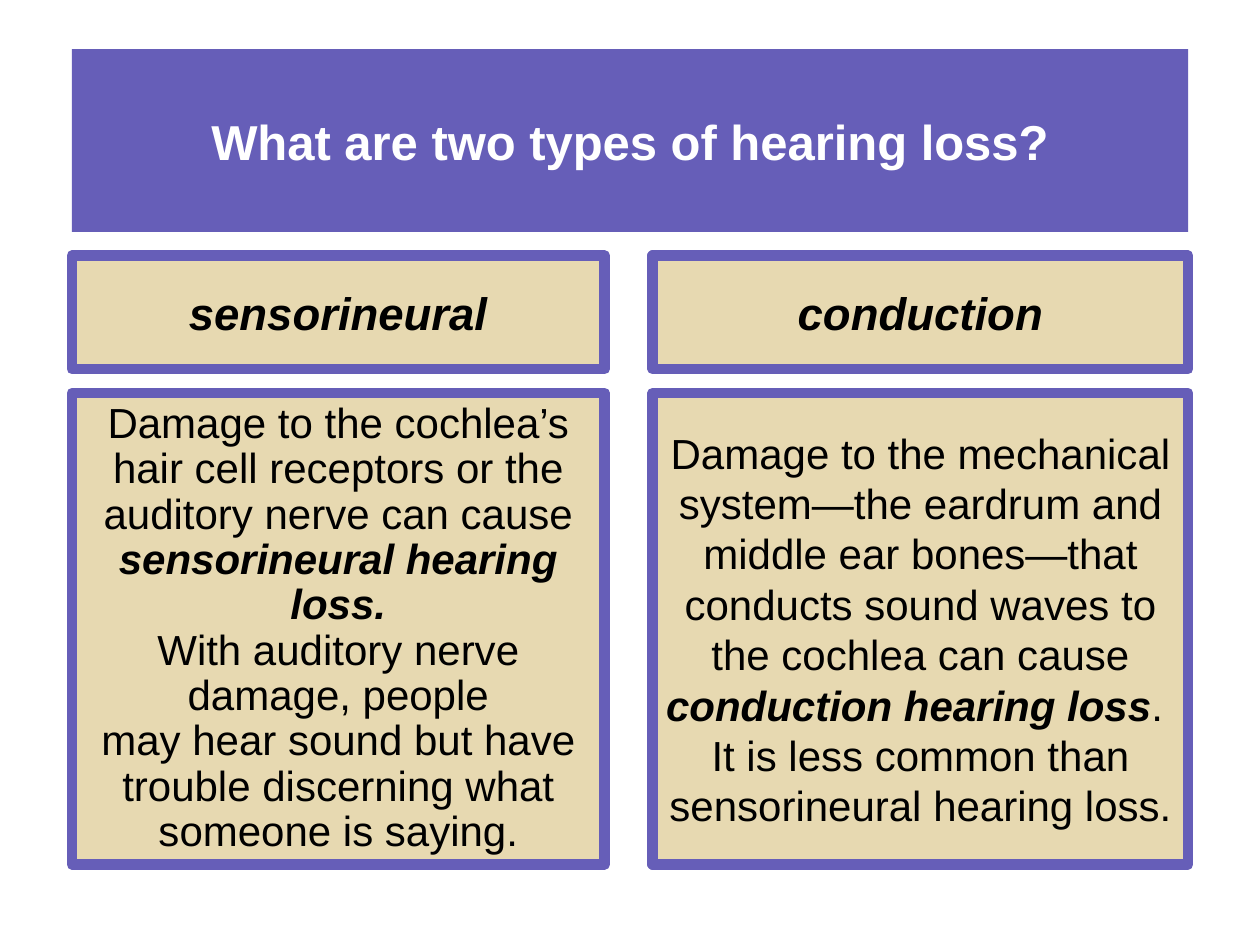
from dataclasses import dataclass

from pptx import Presentation
from pptx.dml.color import RGBColor
from pptx.enum.shapes import MSO_SHAPE
from pptx.enum.text import MSO_ANCHOR, PP_ALIGN
from pptx.util import Inches, Pt


@dataclass(frozen=True)
class Theme:
    purple: RGBColor = RGBColor(0x66, 0x5E, 0xB8)
    sand: RGBColor = RGBColor(0xE7, 0xD9, 0xB1)
    white: RGBColor = RGBColor(0xFF, 0xFF, 0xFF)
    black: RGBColor = RGBColor(0, 0, 0)
    font: str = "Arial"
    title_size: int = 28
    heading_size: int = 26
    body_size: int = 24
    border: int = 6


theme = Theme()


def add_run(paragraph, text, *, size, color=theme.black, bold=False, italic=False):
    run = paragraph.add_run()
    run.text = text
    run.font.name = theme.font
    run.font.size = Pt(size)
    run.font.color.rgb = color
    run.font.bold = bold
    run.font.italic = italic


def add_panel(slide, left, top, width, height, fill, bordered=True):
    shape = slide.shapes.add_shape(
        MSO_SHAPE.RECTANGLE, Inches(left), Inches(top), Inches(width), Inches(height)
    )
    shape.shadow.inherit = False
    shape.fill.solid()
    shape.fill.fore_color.rgb = fill
    if bordered:
        shape.line.color.rgb = theme.purple
        shape.line.width = Pt(theme.border)
    else:
        shape.line.fill.background()
    shape.text_frame.word_wrap = True
    shape.text_frame.vertical_anchor = MSO_ANCHOR.MIDDLE
    shape.text_frame.paragraphs[0].alignment = PP_ALIGN.CENTER
    return shape.text_frame


presentation = Presentation()
presentation.slide_width = Inches(10)
presentation.slide_height = Inches(7.5)
slide = presentation.slides.add_slide(presentation.slide_layouts[6])

title = add_panel(slide, 0.57, 0.39, 8.86, 1.45, theme.purple, bordered=False)
add_run(
    title.paragraphs[0],
    "What are two types of hearing loss?",
    size=theme.title_size,
    color=theme.white,
    bold=True,
)

columns = [
    (0.57, 4.23, "sensorineural", 0.9, [
        [("Damage to the cochlea’s hair cell receptors or the auditory nerve can cause", False)],
        [("sensorineural hearing loss.", True)],
        [("With auditory nerve damage, people", False)],
        [("may hear sound but have trouble discerning what someone is saying.", False)],
    ]),
    (5.18, 4.25, "conduction", None, [
        [
            ("Damage to the mechanical system—the eardrum and middle ear bones—that "
             "conducts sound waves to the cochlea can cause ", False),
            ("conduction hearing loss", True),
            (".  It is less common than sensorineural hearing loss.", False),
        ],
    ]),
]

for left, width, name, line_spacing, paragraphs in columns:
    heading = add_panel(slide, left, 2.03, width, 0.9, theme.sand)
    add_run(heading.paragraphs[0], name, size=theme.heading_size, bold=True, italic=True)

    body = add_panel(slide, left, 3.12, width, 3.74, theme.sand)
    for index, runs in enumerate(paragraphs):
        paragraph = body.add_paragraph() if index else body.paragraphs[0]
        paragraph.alignment = PP_ALIGN.CENTER
        paragraph.line_spacing = line_spacing
        for text, emphasized in runs:
            add_run(paragraph, text, size=theme.body_size, bold=emphasized, italic=emphasized)

presentation.save("out.pptx")
